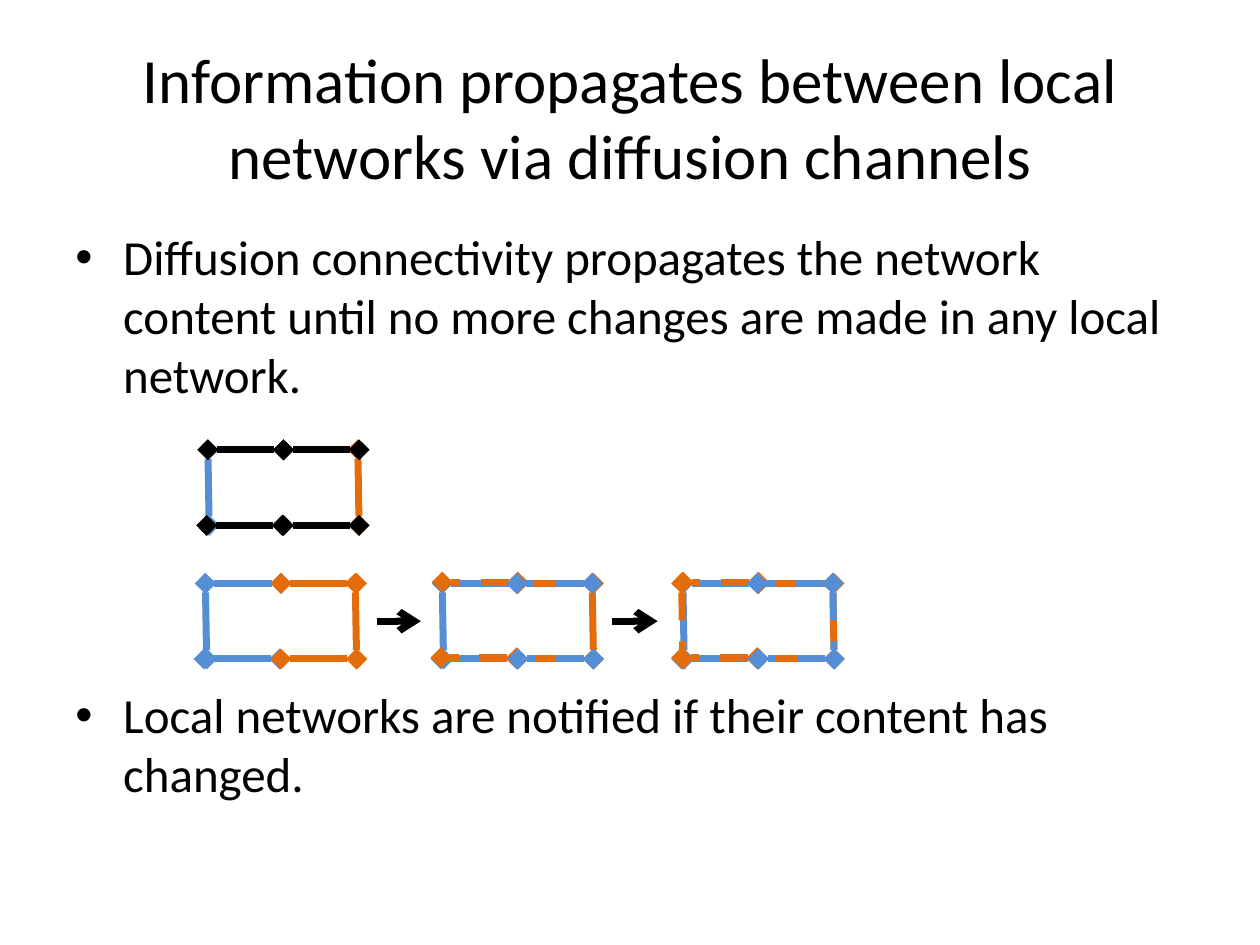
from dataclasses import dataclass

from lxml import etree
from pptx import Presentation
from pptx import util as u
from pptx.dml.color import RGBColor
from pptx.enum import dml, shapes, text
from pptx.oxml.ns import qn


@dataclass(frozen=True)
class Theme:
    font: str = "Calibri"
    black: str = "000000"
    blue: str = "558ED5"
    orange: str = "E46C0A"
    title_size: int = 36
    body_size: int = 28
    line_width: int = 4


# Edges of a local network: start and end, measured from its corner
EDGES = {
    "left": ((0.01, 0), (0.02, 0.6)),
    "top_left": ((0.61, 0), (0.01, 0)),
    "right": ((1.2, 0), (1.21, 0.6)),
    "bottom_left": ((0.6, 0.6), (0, 0.6)),
    "top_right": ((1.21, 0), (0.61, 0)),
    "bottom_right": ((1.21, 0.6), (0.61, 0.6)),
}


class SlideBuilder:
    def __init__(self, s, theme):
        self.s = s
        self.theme = theme

    def add_run(self, p, content, size):
        r = p.add_run()
        r.text = content
        r.font.name = self.theme.font
        r.font.size = u.Pt(size)
        r.font.color.rgb = RGBColor.from_string(self.theme.black)

    def title(self, content, x, y, w, h):
        sp = self.s.shapes.title
        sp.left, sp.top, sp.width, sp.height = map(u.Inches, (x, y, w, h))
        tf = sp.text_frame
        tf.word_wrap = True
        tf.vertical_anchor = text.MSO_ANCHOR.MIDDLE
        p = tf.paragraphs[0]
        p.alignment = text.PP_ALIGN.CENTER
        self.add_run(p, content, self.theme.title_size)

    def bullets(self, items, x, y, w, h):
        """Items are pairs of wording and space before in points."""
        sp = self.s.shapes.add_textbox(*map(u.Inches, (x, y, w, h)))
        tf = sp.text_frame
        tf.word_wrap = True
        for i, (content, gap) in enumerate(items):
            p = tf.add_paragraph() if i else tf.paragraphs[0]
            p.space_before = u.Pt(gap)
            pPr = p._p.get_or_add_pPr()
            pPr.set("marL", str(u.Inches(0.38)))
            pPr.set("indent", str(u.Inches(-0.38)))
            etree.SubElement(pPr, qn("a:buFont"), typeface="Arial")
            etree.SubElement(pPr, qn("a:buChar"), char="•")
            self.add_run(p, content, self.theme.body_size)

    def line(self, start, end, color, head=None, tail=None, dashed=False):
        sp = self.s.shapes.add_connector(
            shapes.MSO_CONNECTOR.STRAIGHT, *map(u.Inches, (*start, *end)))
        sp.line.color.rgb = RGBColor.from_string(color)
        sp.line.width = u.Pt(self.theme.line_width)
        if dashed:
            sp.line.dash_style = dml.MSO_LINE.DASH
        ln = sp.line._get_or_add_ln()
        for tag, kind in (("a:headEnd", head), ("a:tailEnd", tail)):
            if kind:
                etree.SubElement(ln, qn(tag), type=kind)
        etree.SubElement(sp._element.spPr, qn("a:effectLst"))

    def edge(self, corner, name, color, dx=0, dy=0, dashed=False):
        start, end = [(corner[0] + x + dx, corner[1] + y + dy)
                      for x, y in EDGES[name]]
        self.line(start, end, color, "diamond", "diamond", dashed)

    def network(self, x, y, colors, received=()):
        """Solid edges, then dashed content received from a neighbour."""
        for name, color in zip(EDGES, colors):
            self.edge((x, y), name, color)
        for name, color, dx, dy in received:
            self.edge((x, y), name, color, dx, dy, dashed=True)

    def arrow(self, x, y, length):
        self.line((x, y), (x + length, y), self.theme.black, tail="arrow")


def main():
    prs = Presentation()
    prs.slide_width, prs.slide_height = u.Inches(10), u.Inches(7.5)
    t = Theme()
    b = SlideBuilder(prs.slides.add_slide(prs.slide_layouts[5]), t)

    # Wording; the second bullet leaves room for the networks
    b.title("Information propagates between local networks via diffusion channels",
            0.5, 0.3, 9, 1.25)
    b.bullets([
        ("Diffusion connectivity propagates the network content until "
         "no more changes are made in any local network.", 0),
        ("Local networks are notified if their content has changed.", 161),
    ], 0.5, 1.75, 9, 4.95)

    # Content spread along the rows, then along the sides
    row_content = [
        ("top_left", t.orange, 0, -0.01),
        ("bottom_left", t.orange, 0, -0.01),
        ("top_right", t.blue, -0.01, 0),
        ("bottom_right", t.blue, 0, 0),
    ]
    side_content = [("left", t.orange, -0.01, 0), ("right", t.blue, 0, 0)]

    # Three steps of propagation
    start = (t.blue, t.blue, t.orange, t.blue, t.orange, t.orange)
    steps_y = 4.63
    b.network(1.62, steps_y, start)
    b.network(3.5, steps_y, start, row_content)
    b.arrow(2.99, steps_y + 0.3, 0.35)
    b.network(5.41, steps_y, start, row_content + side_content)
    b.arrow(4.86, steps_y + 0.3, 0.36)

    # Diffusion channels in black between the two local networks
    b.network(1.64, 3.57,
              (t.blue, t.black, t.orange, t.black, t.black, t.black))

    prs.save("out.pptx")


if __name__ == "__main__":
    main()
